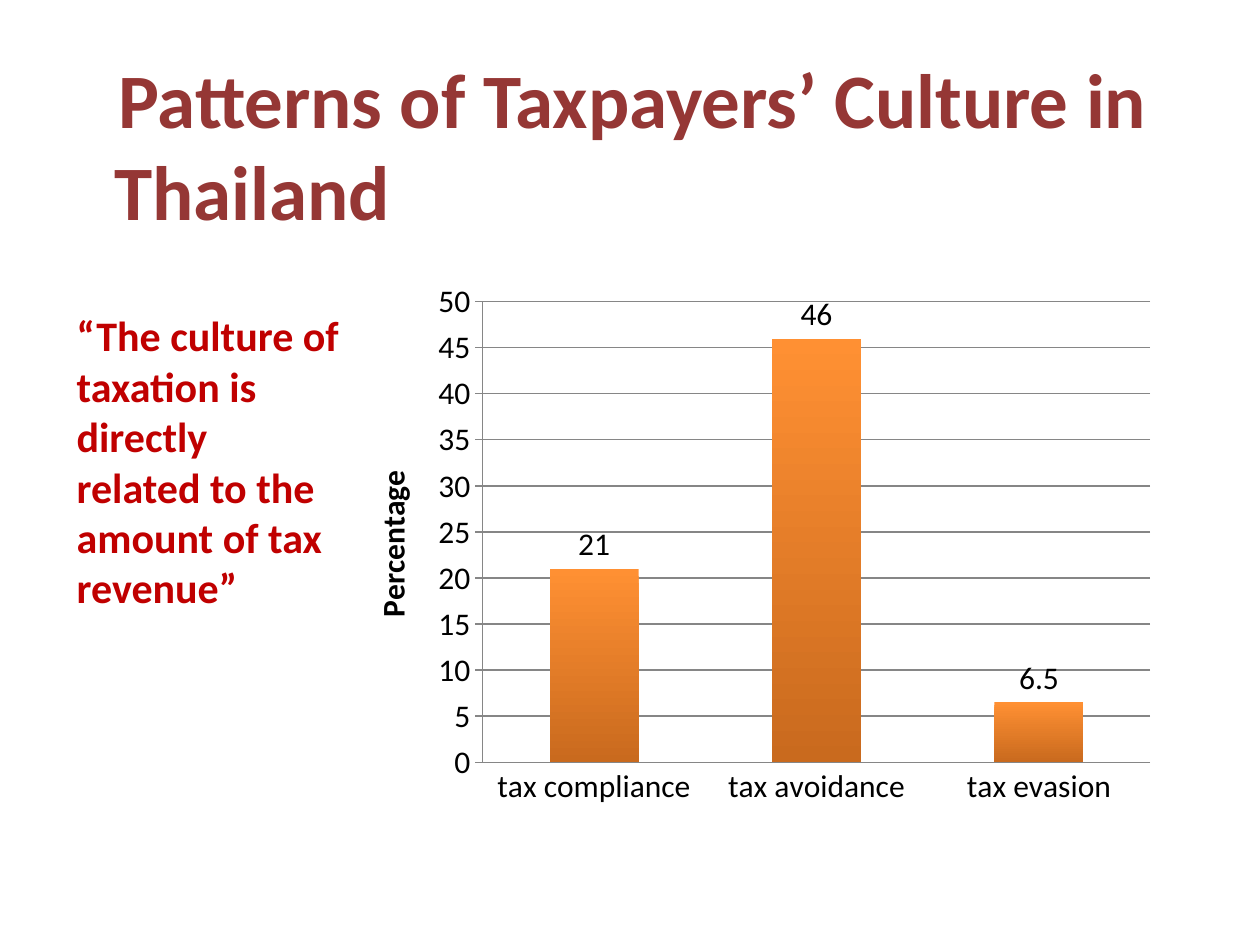
from lxml import etree
from pptx import Presentation
from pptx import util as u
from pptx.chart.data import CategoryChartData
from pptx.dml.color import RGBColor
from pptx.enum import chart as ch
from pptx.oxml.ns import qn

FONT = "Calibri"
COLORS = {
    "title": "953735",
    "quote": "C00000",
    "text": "000000",
    "grid": "868686",
    "bar_top": "FF9033",
    "bar_bottom": "C96A1E",
}


def rgb(name):
    return RGBColor.from_string(COLORS[name])


def style_font(font, size, color, bold=False):
    font.name = FONT
    font.size = u.Pt(size)
    font.bold = bold
    font.color.rgb = rgb(color)


def add_text(s, box, content, size, color):
    sp = s.shapes.add_textbox(*map(u.Inches, box))
    tf = sp.text_frame
    tf.word_wrap = True
    tf.text = content
    p = tf.paragraphs[0]
    style_font(p.runs[0].font, size, color, bold=True)
    return p


def set_indent(p, left, first):
    pPr = p._p.get_or_add_pPr()
    pPr.set("marL", str(u.Inches(left)))
    pPr.set("indent", str(u.Inches(first)))


def set_plot_layout(chart, x, y, w, h):
    area = chart._chartSpace.chart.plotArea
    for old in area.findall(qn("c:layout")):
        area.remove(old)
    layout = etree.Element(qn("c:layout"))
    manual = etree.SubElement(layout, qn("c:manualLayout"))
    values = {"layoutTarget": "inner", "xMode": "edge", "yMode": "edge",
              "x": x, "y": y, "w": w, "h": h}
    for tag, value in values.items():
        etree.SubElement(manual, qn(f"c:{tag}")).set("val", str(value))
    area.insert(0, layout)


def style_axes(chart):
    cat, val = chart.category_axis, chart.value_axis
    cat.major_tick_mark = ch.XL_TICK_MARK.NONE
    val.major_tick_mark = ch.XL_TICK_MARK.OUTSIDE
    val.minimum_scale, val.maximum_scale, val.major_unit = 0, 50, 5
    val.has_major_gridlines = True
    for line in (cat.format.line, val.format.line, val.major_gridlines.format.line):
        line.color.rgb = rgb("grid")
        line.width = u.Pt(0.75)
    tf = val.axis_title.text_frame
    tf.text = "Percentage"
    style_font(tf.paragraphs[0].runs[0].font, 18, "text", bold=True)


def style_bars(plot):
    plot.gap_width = 150
    plot.vary_by_categories = False
    fill = plot.series[0].format.fill
    fill.gradient()
    fill.gradient_angle = 270
    for stop, name in zip(fill.gradient_stops, ("bar_top", "bar_bottom")):
        stop.color.rgb = rgb(name)
    plot.has_data_labels = True
    labels = plot.data_labels
    labels.show_value = True
    labels.position = ch.XL_LABEL_POSITION.OUTSIDE_END
    style_font(labels.font, 18, "text")


def add_column_chart(s, box, categories, values):
    data = CategoryChartData()
    data.categories = categories
    data.add_series("Series 1", values)
    chart = s.shapes.add_chart(
        ch.XL_CHART_TYPE.COLUMN_CLUSTERED, *map(u.Inches, box), data).chart
    chart.has_legend = False
    chart.has_title = False
    style_font(chart.font, 18, "text")
    style_axes(chart)
    style_bars(chart.plots[0])
    set_plot_layout(chart, 0.17, 0.05, 0.81, 0.85)


def main():
    prs = Presentation()
    prs.slide_width, prs.slide_height = u.Inches(10), u.Inches(7.5)
    s = prs.slides.add_slide(prs.slide_layouts[6])
    title = add_text(s, (0.43, 0.36, 8.79, 2.47),
                     "Patterns of Taxpayers’ Culture in Thailand", 44, "title")
    set_indent(title, 0.38, 0.03)
    add_column_chart(s, (2.72, 2.18, 6.54, 4.3),
                     ("tax compliance", "tax avoidance", "tax evasion"), (21, 46, 6.5))
    add_text(s, (0.51, 2.41, 2.28, 2.52),
             "“The culture of taxation is directly related to the amount of tax revenue”",
             24, "quote")
    prs.save("out.pptx")


if __name__ == "__main__":
    main()
